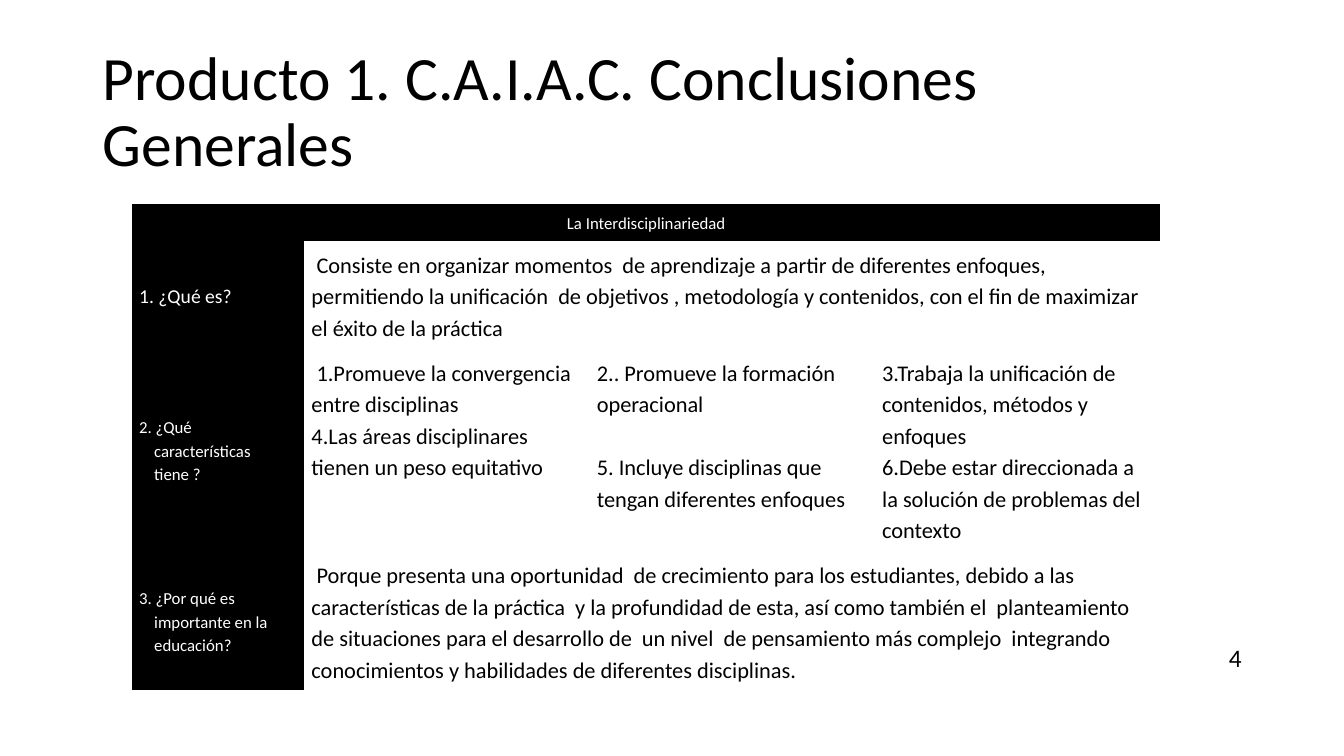
from pptx import Presentation
from pptx.dml.color import RGBColor
from pptx.enum import text
from pptx.util import Inches, Pt


def color(hex_code):
    return RGBColor.from_string(hex_code)


def write(frame, lines, size, hex_code, spacing=None):
    frame.text = "\n".join(lines)
    for paragraph in frame.paragraphs:
        paragraph.line_spacing = spacing
        for run in paragraph.runs:
            run.font.name = "Calibri"
            run.font.size = Pt(size)
            run.font.color.rgb = color(hex_code)


BLACK, WHITE = "000000", "FFFFFF"

deck = Presentation()
deck.slide_width, deck.slide_height = Inches(13.33), Inches(7.5)
slide = deck.slides.add_slide(deck.slide_layouts[6])

title = slide.shapes.add_textbox(Inches(0.92), Inches(0.4), Inches(11.5), Inches(1.45)).text_frame
title.word_wrap = True
title.vertical_anchor = text.MSO_ANCHOR.MIDDLE
write(title, ["Producto 1. C.A.I.A.C. Conclusiones Generales"], 44, BLACK, 0.9)

column_widths = [1.71, 2.83, 2.83, 2.83]
row_heights = [0.37, 1.07, 2.01, 1.38]
conclusions = slide.shapes.add_table(
    4, 4, Inches(1.31), Inches(2.02), Inches(sum(column_widths)), Inches(sum(row_heights))
).table
conclusions._tbl.tblPr.find(
    "{http://schemas.openxmlformats.org/drawingml/2006/main}tableStyleId"
).text = "{2D5ABB26-0587-4C30-8999-92F81FD0307C}"
for column, width in zip(conclusions.columns, column_widths):
    column.width = Inches(width)
for row, height in zip(conclusions.rows, row_heights):
    row.height = Inches(height)

questions = [
    (["La Interdisciplinariedad"], 12),
    (["1. ¿Qué es?"], 14),
    (["2. ¿Qué", "características", "tiene ?"], 12),
    (["3. ¿Por qué es", "importante en la", "educación?"], 12),
]
answers = [
    [],
    [[" Consiste en organizar momentos  de aprendizaje a partir de diferentes enfoques, "
      "permitiendo la unificación  de objetivos , metodología y contenidos, con el fin de "
      "maximizar el éxito de la práctica"]],
    [[" 1.Promueve la convergencia entre disciplinas",
      "4.Las áreas disciplinares tienen un peso equitativo"],
     ["2.. Promueve la formación operacional",
      "5. Incluye disciplinas que tengan diferentes enfoques"],
     ["3.Trabaja la unificación de contenidos, métodos y enfoques",
      "6.Debe estar direccionada a la solución de problemas del contexto"]],
    [[" Porque presenta una oportunidad  de crecimiento para los estudiantes, debido a las "
      "características de la práctica  y la profundidad de esta, así como también el  "
      "planteamiento de situaciones para el desarrollo de  un nivel  de pensamiento más "
      "complejo  integrando  conocimientos y habilidades de diferentes disciplinas."]],
]

for row_index, ((question, size), row_answers) in enumerate(zip(questions, answers)):
    for column_index in range(4):
        cell = conclusions.cell(row_index, column_index)
        cell.margin_left = cell.margin_right = Inches(0.07)
        cell.margin_top = cell.margin_bottom = Inches(0.07)
        if column_index == 0:
            cell.fill.solid()
            cell.fill.fore_color.rgb = color(BLACK)
            cell.vertical_anchor = text.MSO_ANCHOR.MIDDLE
            write(cell.text_frame, question, size, WHITE, 1.15)
            for continuation in cell.text_frame.paragraphs[1:]:
                continuation._p.get_or_add_pPr().set("marL", str(Inches(0.15)))
        else:
            cell.fill.background()
            if column_index <= len(row_answers):
                write(cell.text_frame, row_answers[column_index - 1], 16, BLACK, 1.15)
    if len(row_answers) < 3:
        conclusions.cell(row_index, len(row_answers)).merge(conclusions.cell(row_index, 3))

heading = conclusions.cell(0, 0)
heading.vertical_anchor = text.MSO_ANCHOR.TOP
heading.text_frame.paragraphs[0].alignment = text.PP_ALIGN.CENTER
conclusions.cell(2, 2).text_frame.paragraphs[1].space_before = Pt(22.5)

page_number = slide.shapes.add_textbox(Inches(12.09), Inches(6.32), Inches(0.33), Inches(0.4)).text_frame
page_number.word_wrap = False
page_number.auto_size = text.MSO_AUTO_SIZE.SHAPE_TO_FIT_TEXT
write(page_number, ["4"], 18, BLACK)

deck.save("out.pptx")
